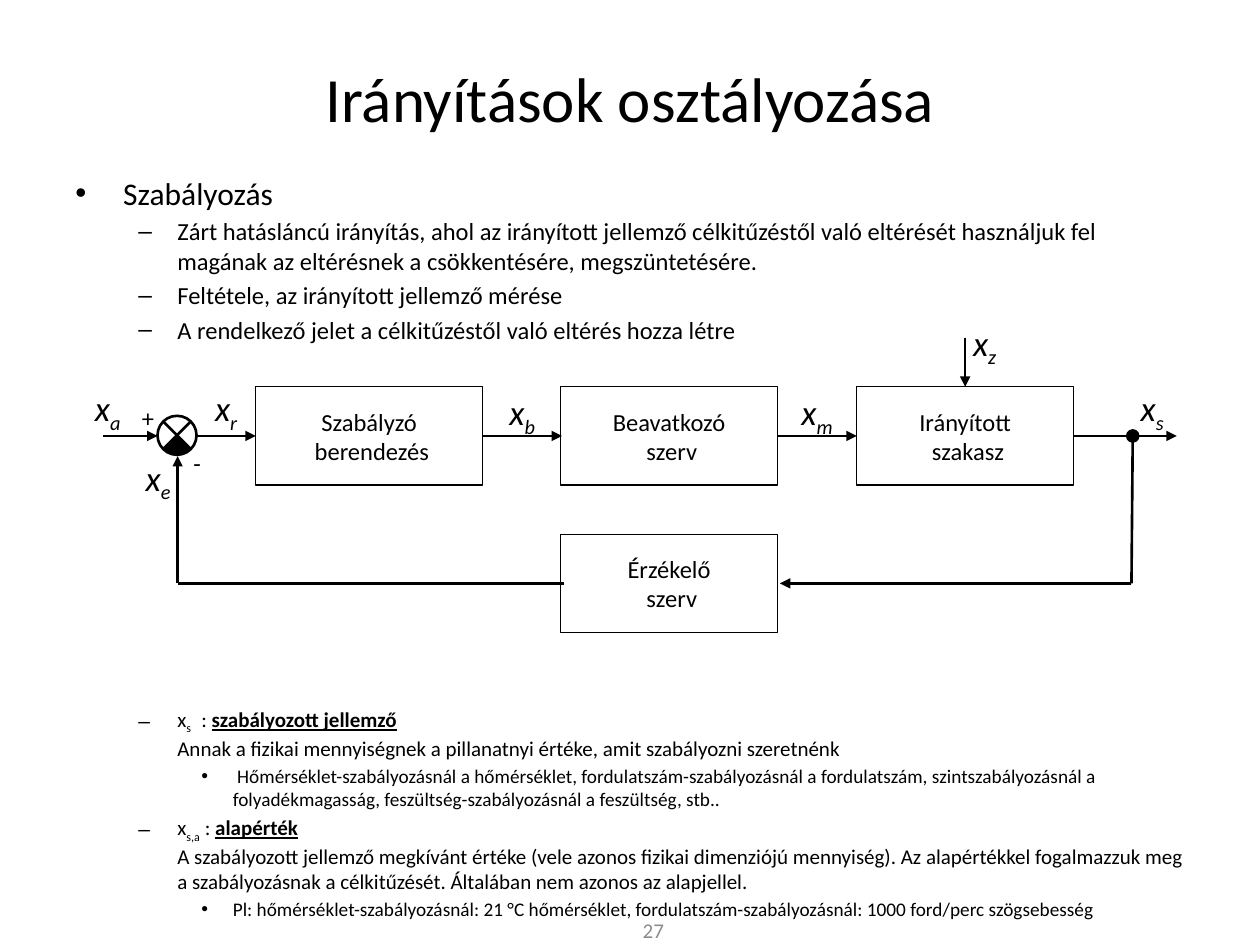
from lxml.etree import SubElement
from pptx import Presentation
from pptx.dml.color import RGBColor
from pptx.enum.shapes import MSO_CONNECTOR, MSO_SHAPE
from pptx.enum.text import MSO_ANCHOR, PP_ALIGN
from pptx.oxml.ns import qn
from pptx.util import Inches, Pt

FONT = "Calibri"
COLORS = {"ink": "000000", "paper": "FFFFFF", "muted": "8C8C8C"}
LEVELS = [("•", 0.38, 0.38), ("–", 0.81, 0.31), ("•", 1.25, 0.25)]
SUB, STRONG = "sub", "strong"
MAIN_Y, FEEDBACK_Y = 3.46, 4.63
BLOCK_H = 0.78
JUNCTION = (1.25, 3.3, 0.31, 0.31)

INTRO = [
    (0, 18, [("Szabályozás", None)]),
    (1, 14, [("Zárt hatásláncú irányítás, ahol az irányított jellemző célkitűzéstől való "
              "eltérését használjuk fel magának az eltérésnek a csökkentésére, "
              "megszüntetésére.", None)]),
    (1, 14, [("Feltétele, az irányított jellemző mérése", None)]),
    (1, 14, [("A rendelkező jelet a célkitűzéstől való eltérés hozza létre", None)]),
]
TERMS = [
    (1, 12, [("x", None), ("s", SUB), ("\t: ", None), ("szabályozott jellemző", STRONG), "br",
             ("Annak a fizikai mennyiségnek a pillanatnyi értéke, amit szabályozni "
              "szeretnénk", None)]),
    (2, 11, [(" Hőmérséklet-szabályozásnál a hőmérséklet, fordulatszám-szabályozásnál a "
              "fordulatszám, szintszabályozásnál a folyadékmagasság, "
              "feszültség-szabályozásnál a feszültség, stb..", None)]),
    (1, 12, [("x", None), ("s,a", SUB), (" : ", None), ("alapérték", STRONG), "br",
             ("A szabályozott jellemző megkívánt értéke (vele azonos fizikai dimenziójú "
              "mennyiség). Az alapértékkel fogalmazzuk meg a szabályozásnak a "
              "célkitűzését. Általában nem azonos az alapjellel.", None)]),
    (2, 11, [("Pl: hőmérséklet-szabályozásnál: 21 °C hőmérséklet, "
              "fordulatszám-szabályozásnál: 1000 ford/perc szögsebesség", None)]),
]
BLOCKS = [
    (2.03, MAIN_Y, 1.8, "Szabályzó", " berendezés"),
    (4.45, MAIN_Y, 1.72, "Beavatkozó", " szerv"),
    (6.8, MAIN_Y, 1.72, "Irányított", " szakasz"),
    (4.45, FEEDBACK_Y, 1.72, "Érzékelő", " szerv"),
]
SIGNALS = [("a", 0.62, 3.02), ("r", 1.56, 3.02), ("b", 3.91, 3.05), ("m", 6.25, 3.05),
           ("s", 8.91, 3.02), ("e", 1.02, 3.57), ("z", 7.58, 2.5)]
SIGNS = [("+", 0.94, 3.15), ("-", 1.33, 3.51)]
FORWARD = [(0.82, 1.25), (1.56, 2.03), (3.83, 4.46), (6.17, 6.8), (8.52, 9.34)]
FEEDBACK = [
    (8.99, 3.49, 8.98, FEEDBACK_Y, False),
    (8.98, FEEDBACK_Y, 6.19, FEEDBACK_Y, True),
    (4.48, FEEDBACK_Y, 1.41, FEEDBACK_Y, False),
    (1.41, FEEDBACK_Y, 1.41, 3.62, True),
]


def rgb(name):
    return RGBColor.from_string(COLORS[name])


def add_run(p, text, size, style=None, color="ink", italic=False):
    r = p.add_run()
    r.text = text
    r.font.name = FONT
    r.font.size = Pt(size)
    r.font.color.rgb = rgb(color)
    r.font.italic = italic
    if style == STRONG:
        r.font.bold = r.font.underline = True
    if style == SUB:
        r._r.get_or_add_rPr().set("baseline", "-25000")


def add_box(s, at, anchor=MSO_ANCHOR.TOP):
    tf = s.shapes.add_textbox(*map(Inches, at)).text_frame
    tf.word_wrap = True
    tf.vertical_anchor = anchor
    return tf


def add_label(s, at, runs, size, color="ink", italic=False, anchor=MSO_ANCHOR.TOP):
    p = add_box(s, at, anchor).paragraphs[0]
    p.alignment = PP_ALIGN.CENTER
    for text, style in runs:
        add_run(p, text, size, style, color, italic)


def add_outline(s, at, items):
    tf = add_box(s, at)
    for i, (level, size, runs) in enumerate(items):
        p = tf.add_paragraph() if i else tf.paragraphs[0]
        p.level = level
        p.space_before = Pt(0.2 * size if i else 0)
        bullet, left, hang = LEVELS[level]
        pPr = p._p.get_or_add_pPr()
        pPr.set("marL", str(Inches(left)))
        pPr.set("indent", str(-Inches(hang)))
        SubElement(pPr, qn("a:buFont")).set("typeface", "Arial")
        SubElement(pPr, qn("a:buChar")).set("char", bullet)
        for run in runs:
            if run == "br":
                p.add_line_break()
            else:
                add_run(p, run[0], size, run[1])


def add_figure(s, kind, at, fill, line_width=None):
    sp = s.shapes.add_shape(kind, *map(Inches, at))
    sp.shadow.inherit = False
    sp.fill.solid()
    sp.fill.fore_color.rgb = rgb(fill)
    if line_width:
        sp.line.color.rgb = rgb("ink")
        sp.line.width = Pt(line_width)
    else:
        sp.line.fill.background()
    return sp


def add_block(s, left, center_y, width, *lines):
    at = (left, center_y - BLOCK_H / 2, width, BLOCK_H)
    tf = add_figure(s, MSO_SHAPE.RECTANGLE, at, "paper", 0.75).text_frame
    tf.vertical_anchor = MSO_ANCHOR.MIDDLE
    for i, line in enumerate(lines):
        p = tf.add_paragraph() if i else tf.paragraphs[0]
        p.alignment = PP_ALIGN.CENTER
        add_run(p, line, 14)


def add_line(s, x1, y1, x2, y2, arrow=True, width=1):
    c = s.shapes.add_connector(MSO_CONNECTOR.STRAIGHT, *map(Inches, (x1, y1, x2, y2)))
    c.line.color.rgb = rgb("ink")
    c.line.width = Pt(width)
    if arrow:
        SubElement(c.line._get_or_add_ln(), qn("a:tailEnd")).set("type", "triangle")
    SubElement(c._element.spPr, qn("a:effectLst"))


def add_junction(s):
    add_figure(s, MSO_SHAPE.FLOWCHART_SUMMING_JUNCTION, JUNCTION, "paper", 1.5)
    pie = add_figure(s, MSO_SHAPE.PIE, JUNCTION, "ink")
    pie.adjustments[0] = 28.12
    pie.adjustments[1] = 79.85


def add_control_loop(s):
    for block in BLOCKS:
        add_block(s, *block)
    for x1, x2 in FORWARD:
        add_line(s, x1, MAIN_Y, x2, MAIN_Y)
    add_line(s, 7.66, 2.68, 7.66, 3.07)
    for x1, y1, x2, y2, arrow in FEEDBACK:
        add_line(s, x1, y1, x2, y2, arrow, 1.5)
    add_junction(s)
    add_figure(s, MSO_SHAPE.OVAL, (8.95, 3.42, 0.08, 0.08), "ink", 2)
    for sub, x, y in SIGNALS:
        add_label(s, (x, y, 0.47, 0.44), [("x", None), (sub, SUB)], 20, italic=True)
    for sign, x, y in SIGNS:
        add_label(s, (x, y, 0.47, 0.34), [(sign, None)], 14)


def main():
    prs = Presentation()
    prs.slide_width, prs.slide_height = Inches(10), Inches(7.5)
    s = prs.slides.add_slide(prs.slide_layouts[6])
    add_label(s, (0.5, 0.3, 9, 0.95), [("Irányítások osztályozása", None)], 36,
              anchor=MSO_ANCHOR.MIDDLE)
    add_outline(s, (0.5, 1.33, 9, 1.45), INTRO)
    add_outline(s, (0.5, 5.56, 9, 1.8), TERMS)
    add_label(s, (4.77, 7.26, 0.83, 0.24), [("27", None)], 12, "muted",
              anchor=MSO_ANCHOR.MIDDLE)
    add_control_loop(s)
    prs.save("out.pptx")


if __name__ == "__main__":
    main()
